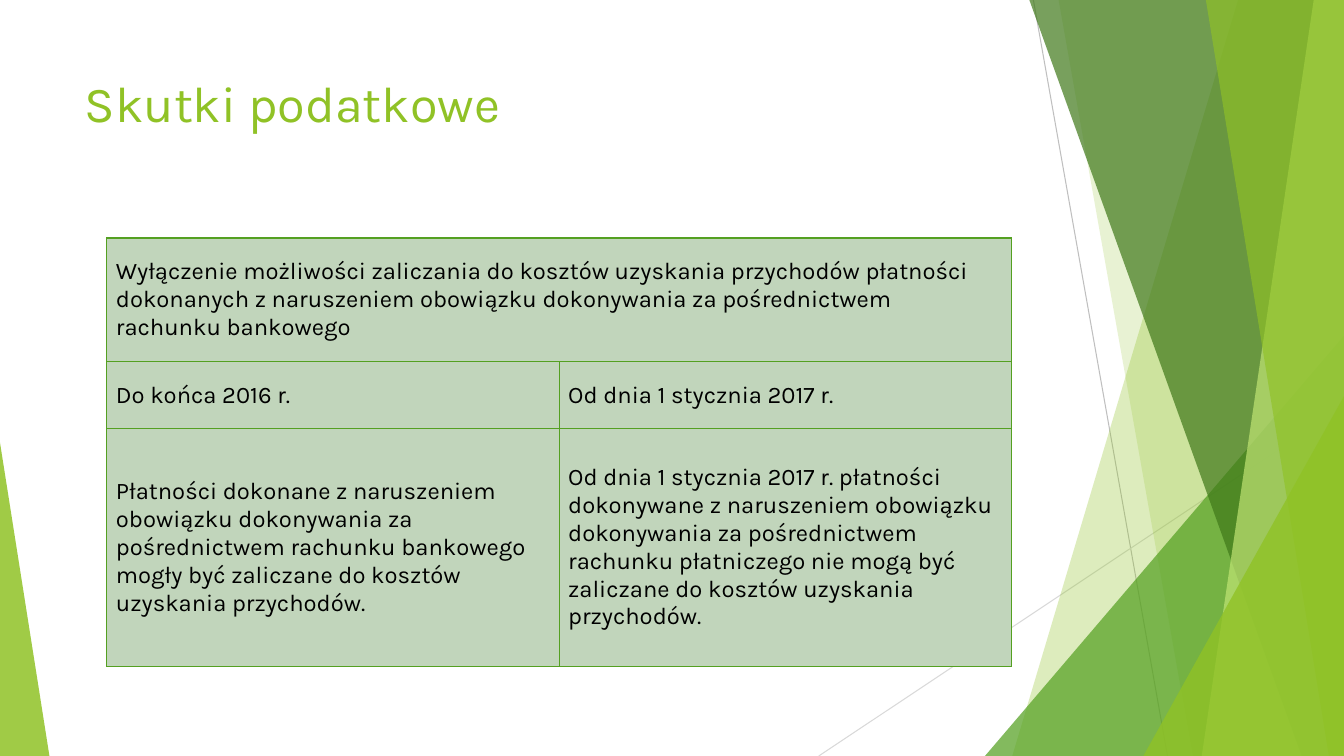
from lxml import etree
from pptx import Presentation, util as u
from pptx.dml.color import RGBColor
from pptx.enum import shapes, text
from pptx.oxml import ns

THEME = {
    "font": "Karla", "head": 36, "body": 17,
    "lime": "90C226", "leaf": "54A021", "moss": "3F7819", "pale": "C0E474",
    "cell": "C1D5BB", "ink": "000000", "grey": "BFBFBF", "mist": "D9D9D9",
}
WIDE, HIGH = u.Inches(13.33), u.Inches(7.5)

RAYS = [((76.89, 0), (86.87, 100), "grey"), ((100, 53.73), (60.92, 100), "mist")]
BACK = [(92.12, 75.32, "lime", 30), (78.77, 88.75, "lime", 20)]
FRONT = [(76.59, 96.85, "moss", 70), (97.75, 89.42, "pale", 70), (89.72, 98.87, "lime", 65)]
HEAD = "Skutki podatkowe"
ROWS = [
    (16.4, ["Wyłączenie możliwości zaliczania do kosztów uzyskania przychodów płatności "
            "dokonanych z naruszeniem obowiązku dokonywania za pośrednictwem rachunku bankowego"]),
    (8.8, ["Do końca 2016 r.", "Od dnia 1 stycznia 2017 r."]),
    (31.47, ["Płatności dokonane z naruszeniem obowiązku dokonywania za pośrednictwem "
             "rachunku bankowego mogły być zaliczane do kosztów uzyskania przychodów.",
             "Od dnia 1 stycznia 2017 r. płatności dokonywane z naruszeniem obowiązku "
             "dokonywania za pośrednictwem rachunku płatniczego nie mogą być zaliczane "
             "do kosztów uzyskania przychodów."]),
]


def across(share):
    return round(WIDE * share / 100)


def down(share):
    return round(HIGH * share / 100)


def tone(name):
    return RGBColor.from_string(THEME[name])


def apply(item, **form):
    for key, value in form.items():
        setattr(item, key, value)


def child(node, tag, **attrs):
    return etree.SubElement(node, ns.qn(tag), attrs)


def write(frame, words, size, color):
    para = frame.paragraphs[0]
    para.alignment = text.PP_ALIGN.LEFT
    run = para.add_run()
    apply(run, text=words)
    apply(run.font, name=THEME["font"], size=u.Pt(THEME[size]))
    run.font.color.rgb = tone(color)


def tint(shape, color, alpha):
    shape.shadow.inherit = False
    shape.line.fill.background()
    shape.fill.solid()
    shape.fill.fore_color.rgb = tone(color)
    for node in shape.fill._xPr.iter(ns.qn("a:srgbClr")):
        child(node, "a:alpha", val=str(alpha * 1000))


def ray(slide, start, end, color):
    line = slide.shapes.add_connector(
        shapes.MSO_CONNECTOR.STRAIGHT,
        across(start[0]), down(start[1]), across(end[0]), down(end[1]))
    line.line.color.rgb = tone(color)
    line.line.width = u.Pt(0.75)
    child(line._element.spPr, "a:effectLst")


def facet(slide, top, foot, color, alpha):
    pen = slide.shapes.build_freeform(across(top), 0, 1.0)
    pen.add_line_segments([(WIDE, 0), (WIDE, HIGH), (across(foot), HIGH)], close=True)
    tint(pen.convert_to_shape(), color, alpha)


def wedge(slide, left, top, width, peak, color, alpha):
    shape = slide.shapes.add_shape(
        shapes.MSO_SHAPE.ISOSCELES_TRIANGLE,
        across(left), down(top), across(width), HIGH - down(top))
    shape.adjustments[0] = peak
    tint(shape, color, alpha)


def title(slide):
    box = slide.shapes.title
    apply(box, left=across(5.55), top=down(8.93), width=across(70.52), height=down(19.2))
    apply(box.text_frame, word_wrap=True, auto_size=text.MSO_AUTO_SIZE.NONE,
          vertical_anchor=text.MSO_ANCHOR.TOP)
    write(box.text_frame, HEAD, "head", "lime")


def edge(cell):
    props = cell._tc.get_or_add_tcPr()
    for spot, side in enumerate(("a:lnL", "a:lnR", "a:lnT", "a:lnB")):
        line = etree.Element(ns.qn(side), w=str(u.Pt(1)))
        child(child(line, "a:solidFill"), "a:srgbClr", val=THEME["leaf"])
        props.insert(spot, line)


def table(slide):
    high = sum(share for share, _ in ROWS)
    grid = slide.shapes.add_table(
        len(ROWS), 2, across(7.95), down(31.47), across(67.3), down(high)).table
    apply(grid, first_row=False, horz_banding=False)
    grid.cell(0, 0).merge(grid.cell(0, 1))
    for row, (share, words) in enumerate(ROWS):
        grid.rows[row].height = down(share)
        for col in range(2):
            cell = grid.cell(row, col)
            apply(cell, vertical_anchor=text.MSO_ANCHOR.MIDDLE,
                  margin_left=u.Inches(0.09), margin_right=u.Inches(0.09),
                  margin_top=u.Inches(0.05), margin_bottom=u.Inches(0.05))
            cell.fill.solid()
            cell.fill.fore_color.rgb = tone("cell")
            edge(cell)
            if col < len(words):
                write(cell.text_frame, words[col], "body", "ink")


def main():
    deck = Presentation()
    apply(deck, slide_width=WIDE, slide_height=HIGH)
    slide = deck.slides.add_slide(deck.slide_layouts.get_by_name("Title Only"))
    for item in RAYS:
        ray(slide, *item)
    for item in BACK:
        facet(slide, *item)
    wedge(slide, 73.29, 44.4, 26.71, 1, "leaf", 72)
    for item in FRONT:
        facet(slide, *item)
    wedge(slide, 85.07, 52.4, 14.93, 1, "lime", 80)
    wedge(slide, 0, 58.53, 3.68, 0, "lime", 85)
    title(slide)
    table(slide)
    deck.save("out.pptx")


if __name__ == "__main__":
    main()
